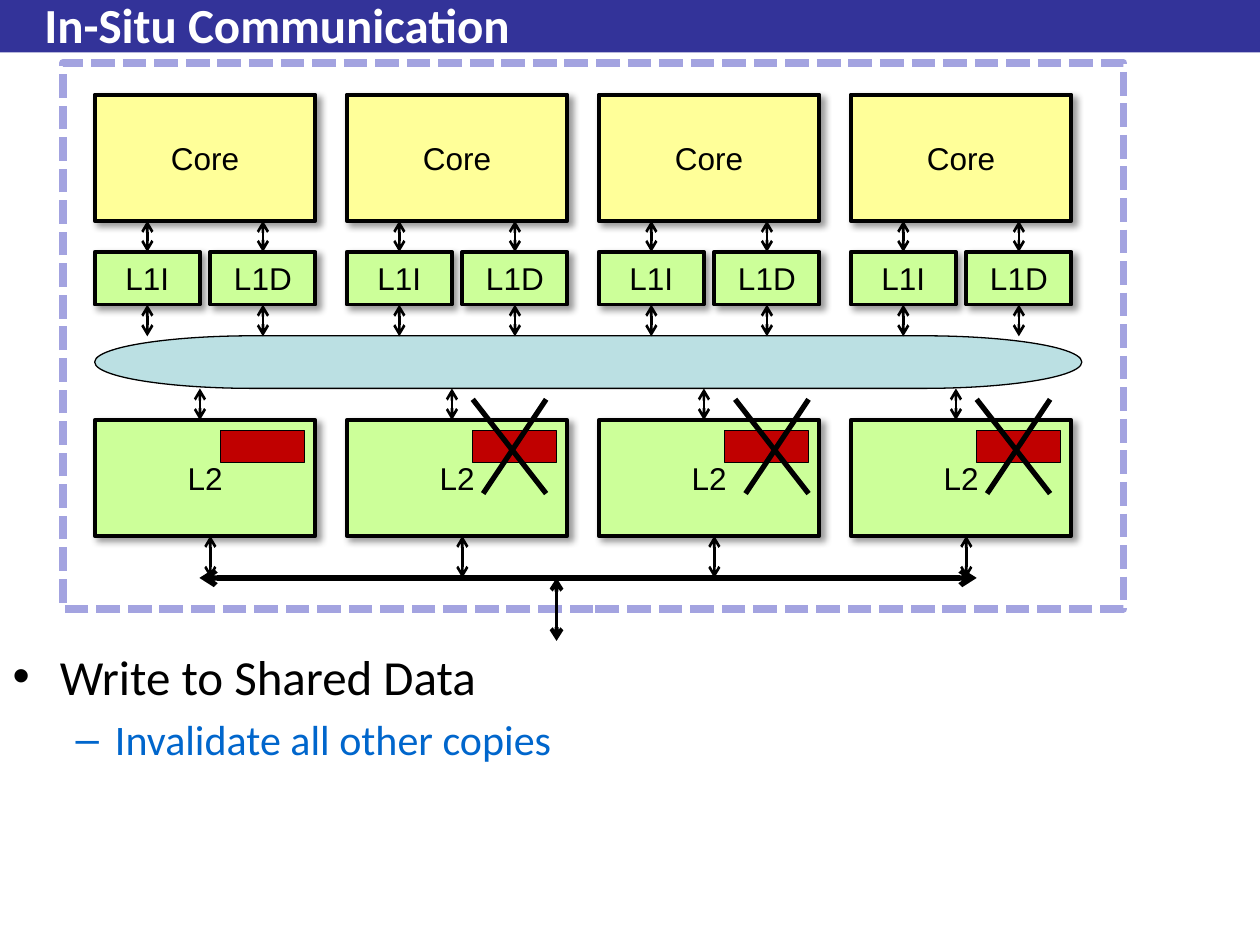
from pptx import Presentation
from pptx import util as u
from pptx.dml.color import RGBColor
from pptx.enum import dml, shapes, text
from pptx.oxml.ns import qn
from lxml import etree

BLACK = "000000"
LIME = "CCFF99"
PITCH = 5.08


def hue(code):
    return RGBColor.from_string(code)


def write(frame, words, size=18, font="Arial", color=BLACK, bold=False,
          align=None, level=0, more=False):
    para = frame.add_paragraph() if more else frame.paragraphs[0]
    para.level = level
    para.alignment = align
    run = para.add_run()
    run.text = words
    run.font.size = u.Pt(size)
    run.font.name = font
    run.font.bold = bold
    run.font.color.rgb = hue(color)


def place(item, x, y, w, h):
    item.left, item.top, item.width, item.height = map(u.Cm, (x, y, w, h))


def shade(box):
    glow = etree.SubElement(
        box._element.spPr.find(qn("a:effectLst")), qn("a:outerShdw"),
        blurRad="50800", dist="38100", dir="2700000", algn="tl", rotWithShape="0")
    tint = etree.SubElement(glow, qn("a:srgbClr"), val=BLACK)
    etree.SubElement(tint, qn("a:alpha"), val="40000")


def block(slide, x, y, w, h, fill=None, line=BLACK, width=0.75, label="",
          kind=shapes.MSO_SHAPE.RECTANGLE):
    box = slide.shapes.add_shape(kind, *map(u.Cm, (x, y, w, h)))
    box.shadow.inherit = False
    if fill:
        box.fill.solid()
        box.fill.fore_color.rgb = hue(fill)
    else:
        box.fill.background()
    if line:
        box.line.color.rgb = hue(line)
        box.line.width = u.Pt(width)
    else:
        box.line.fill.background()
    if label:
        shade(box)
        box.text_frame.vertical_anchor = text.MSO_ANCHOR.MIDDLE
        write(box.text_frame, label, align=text.PP_ALIGN.CENTER)
    return box


def link(slide, x1, y1, x2, y2, width=1.5, heads=True):
    wire = slide.shapes.add_connector(
        shapes.MSO_CONNECTOR.STRAIGHT, *map(u.Cm, (x1, y1, x2, y2)))
    wire.line.color.rgb = hue(BLACK)
    wire.line.width = u.Pt(width)
    if heads:
        for end in ("a:headEnd", "a:tailEnd"):
            etree.SubElement(wire.line._get_or_add_ln(), qn(end), type="arrow")
    etree.SubElement(wire._element.spPr, qn("a:effectLst"))
    return wire


def header(slide, x, y, w, h):
    band = block(slide, x, y, w, h, fill="333399", line=None)
    slide.shapes._spTree.insert(2, band._element)
    title = slide.shapes.title
    place(title, x + 0.64, y + 0.13, 23.5, 0.71)
    frame = title.text_frame
    frame.auto_size = text.MSO_AUTO_SIZE.NONE
    frame.vertical_anchor = text.MSO_ANCHOR.MIDDLE
    write(frame, "In-Situ Communication", size=28, font="Calibri",
          color="FFFFFF", bold=True, align=text.PP_ALIGN.LEFT)


def notes(slide, x, y, w, h):
    body = slide.placeholders[1]
    place(body, x, y, w, h)
    frame = body.text_frame
    frame.auto_size = text.MSO_AUTO_SIZE.NONE
    write(frame, "Write to Shared Data", size=28, font="Calibri")
    write(frame, "Invalidate all other copies", size=24, font="Calibri",
          color="0066CC", level=1, more=True)


def core(slide, x, y, w):
    block(slide, x, y, w, 2.54, fill="FFFF99", width=2.25, label="Core")
    for step, label in ((0, "L1I"), (2.33, "L1D")):
        cache = block(slide, x + step, y + 3.17, 2.12, 1.06, fill=LIME,
                      width=2.25, label=label)
        mid = x + step + 1.06
        link(slide, mid, y + 2.54, mid, y + 3.17).end_connect(cache, 0)
        link(slide, mid, y + 4.23, mid, y + 4.87).begin_connect(cache, 2)


def bank(slide, x, y, w, h):
    block(slide, x, y, w, h, fill=LIME, width=2.25, label="L2")
    block(slide, x + 2.54, y + 0.21, 1.69, 0.64, fill="C00000")
    link(slide, x + 2.12, y - 0.64, x + 2.12, y)
    link(slide, x + 2.33, y + h, x + 2.33, y + h + 0.85)


def cross(slide, x, y, w, h):
    link(slide, x, y, x + w, y + h, width=3, heads=False)
    link(slide, x + w, y, x + 0.21, y + h, width=3, heads=False)


def chip(slide, x, y, w, h):
    edge = block(slide, x, y, w, h, line="A3A3E0", width=4.5)
    edge.line.dash_style = dml.MSO_LINE.SQUARE_DOT
    left = x + 0.64
    block(slide, left, y + 5.5, 19.9, 1.06, fill="BBE0E3",
          kind=shapes.MSO_SHAPE.FLOWCHART_TERMINATOR)
    for col in range(4):
        core(slide, left + col * PITCH, y + 0.64, 4.45)
        bank(slide, left + col * PITCH, y + 7.2, 4.45, 2.33)
    link(slide, x + 2.75, y + 10.38, x + 18.42, y + 10.38, width=3)
    link(slide, x + 9.95, y + 10.38, x + 9.95, y + 11.65, width=2.25)
    for col, shift in ((1, 2.54), (2, 2.75), (3, 2.54)):
        cross(slide, left + col * PITCH + shift, y + 6.78, 1.48, 1.9)


def main():
    deck = Presentation()
    deck.slide_width, deck.slide_height = u.Cm(25.4), u.Cm(19.05)
    slide = deck.slides.add_slide(deck.slide_layouts[1])
    header(slide, 0, 0, 25.4, 1.06)
    notes(slide, 0, 12.9, 25.4, 5.51)
    chip(slide, 1.27, 1.27, 21.38, 11)
    deck.save("out.pptx")


if __name__ == "__main__":
    main()
